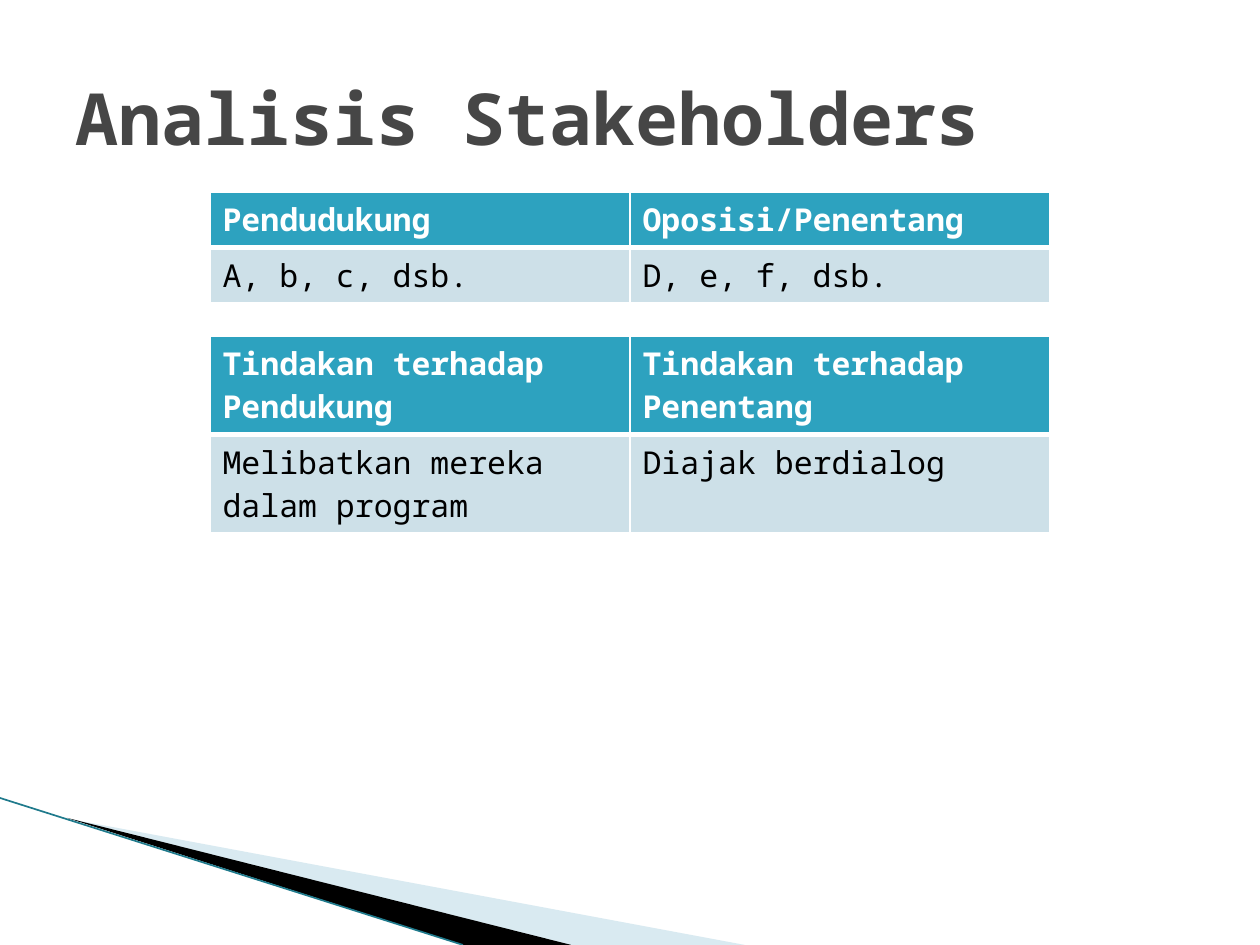
"""Build the stakeholder analysis slide."""
from dataclasses import dataclass

import pptx
import pptx.dml.color
import pptx.enum.shapes
import pptx.enum.text
import pptx.oxml
import pptx.oxml.ns
import pptx.util
from lxml import etree

PX = 914400 // 126


@dataclass(frozen=True)
class Theme:
    """Colours, font and type sizes of the slide."""
    font: str = "Noto Sans Mono"
    title_size: int = 41
    cell_size: int = 18
    title: str = "464646"
    header: str = "2DA2BF"
    body: str = "CDE0E8"
    white: str = "FFFFFF"
    black: str = "000000"
    pale: str = "A0CBDC"
    edge: str = "1F7A8C"


@dataclass(frozen=True)
class Grid:
    """A two-row table with a header, placed by its top and row height."""
    top: int
    row_height: int
    rows: tuple[tuple[str, ...], ...]


@dataclass(frozen=True)
class Wedge:
    """A filled corner triangle whose outline may reach beyond its frame."""
    frame: tuple[int, int, int, int]
    points: tuple[tuple[int, int], ...]
    color: str
    opacity: int = 100


THEME = Theme()
TABLE_LEFT, COLUMN_WIDTH = 210, 420
GRIDS = (
    Grid(192, 55, (("Pendudukung", "Oposisi/Penentang"),
                   ("A, b, c, dsb.", "D, e, f, dsb."))),
    Grid(336, 98, (("Tindakan terhadap Pendukung", "Tindakan terhadap Penentang"),
                   ("Melibatkan mereka dalam program", "Diajak berdialog"))),
)
WEDGES = (
    Wedge((98, 689, 524, 199), ((69, 819), (745, 945), (571, 945)), THEME.pale, 40),
    Wedge((-8, 798, 524, 116), ((67, 818), (571, 945), (463, 945)), THEME.black),
)


def rgb(color: str) -> pptx.dml.color.RGBColor:
    """Turn a hex string into a colour."""
    return pptx.dml.color.RGBColor.from_string(color)


def style_font(font, size: int, color: str, bold: bool) -> None:
    """Apply the type format to a font."""
    formats = {"name": THEME.font, "size": pptx.util.Pt(size), "bold": bold}
    for name, value in formats.items():
        setattr(font, name, value)
    font.color.rgb = rgb(color)


def place(sp, frame: tuple[int, int, int, int]) -> None:
    """Set the frame of a shape."""
    for name, value in zip(("left", "top", "width", "height"), frame):
        setattr(sp, name, value * PX)


def set_frame(sp, wedge: Wedge) -> None:
    """Give a wedge its frame while its points keep their places."""
    left, top, width, height = wedge.frame
    place(sp, wedge.frame)
    outline = sp._element.spPr.find(".//" + pptx.oxml.ns.qn("a:path"))
    outline.set("w", str(width * PX))
    outline.set("h", str(height * PX))
    corners = wedge.points + wedge.points[:1]
    for pt, (x, y) in zip(outline.iter(pptx.oxml.ns.qn("a:pt")), corners):
        pt.set("x", str((x - left) * PX))
        pt.set("y", str((y - top) * PX))


def draw_wedge(s, wedge: Wedge) -> None:
    """Draw one corner triangle."""
    builder = s.shapes.build_freeform(*wedge.points[0], scale=PX)
    builder.add_line_segments(wedge.points[1:], close=True)
    sp = builder.convert_to_shape()
    set_frame(sp, wedge)
    sp.shadow.inherit = False
    sp.line.fill.background()
    sp.fill.solid()
    sp.fill.fore_color.rgb = rgb(wedge.color)
    if wedge.opacity < 100:
        clr = sp._element.spPr.find(".//" + pptx.oxml.ns.qn("a:srgbClr"))
        alpha = etree.SubElement(clr, pptx.oxml.ns.qn("a:alpha"))
        alpha.set("val", str(wedge.opacity * 1000))


def draw_edge(s) -> None:
    """Draw the thin line along the corner triangles."""
    sp = s.shapes.add_connector(pptx.enum.shapes.MSO_CONNECTOR.STRAIGHT,
                                0, 798 * PX, 463 * PX, 945 * PX)
    sp.line.color.rgb = rgb(THEME.edge)
    sp.line.width = pptx.util.Pt(0.95)
    etree.SubElement(sp._element.spPr, pptx.oxml.ns.qn("a:effectLst"))


def set_borders(cell, widths: dict[str, int]) -> None:
    """Give a cell white borders of the given point widths."""
    tc_pr = cell._tc.get_or_add_tcPr()
    for i, (side, width) in enumerate(widths.items()):
        tc_pr.insert(i, pptx.oxml.parse_xml(
            f'<a:ln{side} {pptx.oxml.ns.nsdecls("a")} w="{width * 12700}">'
            f'<a:solidFill><a:srgbClr val="{THEME.white}"/></a:solidFill>'
            f'</a:ln{side}>'))


def draw_grid(s, grid: Grid) -> None:
    """Draw one table with its header row."""
    columns = len(grid.rows[0])
    table = s.shapes.add_table(
        len(grid.rows), columns, TABLE_LEFT * PX, grid.top * PX,
        columns * COLUMN_WIDTH * PX, len(grid.rows) * grid.row_height * PX).table
    for i, row in enumerate(grid.rows):
        header = i == 0
        for j, text in enumerate(row):
            cell = table.cell(i, j)
            cell.text = text
            cell.fill.solid()
            cell.fill.fore_color.rgb = rgb(THEME.header if header else THEME.body)
            r = cell.text_frame.paragraphs[0].runs[0]
            style_font(r.font, THEME.cell_size,
                       THEME.white if header else THEME.black, header)
            set_borders(cell, {"L": 1, "R": 1, "T": 1 if header else 3,
                               "B": 3 if header else 1})


def draw_title(s, text: str) -> None:
    """Place and format the title placeholder."""
    sp = s.shapes.title
    place(sp, (63, 38, 1134, 158))
    tf = sp.text_frame
    tf.text = text
    tf.vertical_anchor = pptx.enum.text.MSO_ANCHOR.MIDDLE
    p = tf.paragraphs[0]
    p.alignment = pptx.enum.text.PP_ALIGN.LEFT
    style_font(p.runs[0].font, THEME.title_size, THEME.title, True)


def main() -> None:
    """Build and save the slide."""
    prs = pptx.Presentation()
    prs.slide_width = pptx.util.Inches(10)
    prs.slide_height = pptx.util.Inches(7.5)
    s = prs.slides.add_slide(prs.slide_layouts[5])
    for wedge in WEDGES:
        draw_wedge(s, wedge)
    draw_edge(s)
    draw_title(s, "Analisis Stakeholders")
    for grid in GRIDS:
        draw_grid(s, grid)
    prs.save("out.pptx")


if __name__ == "__main__":
    main()
